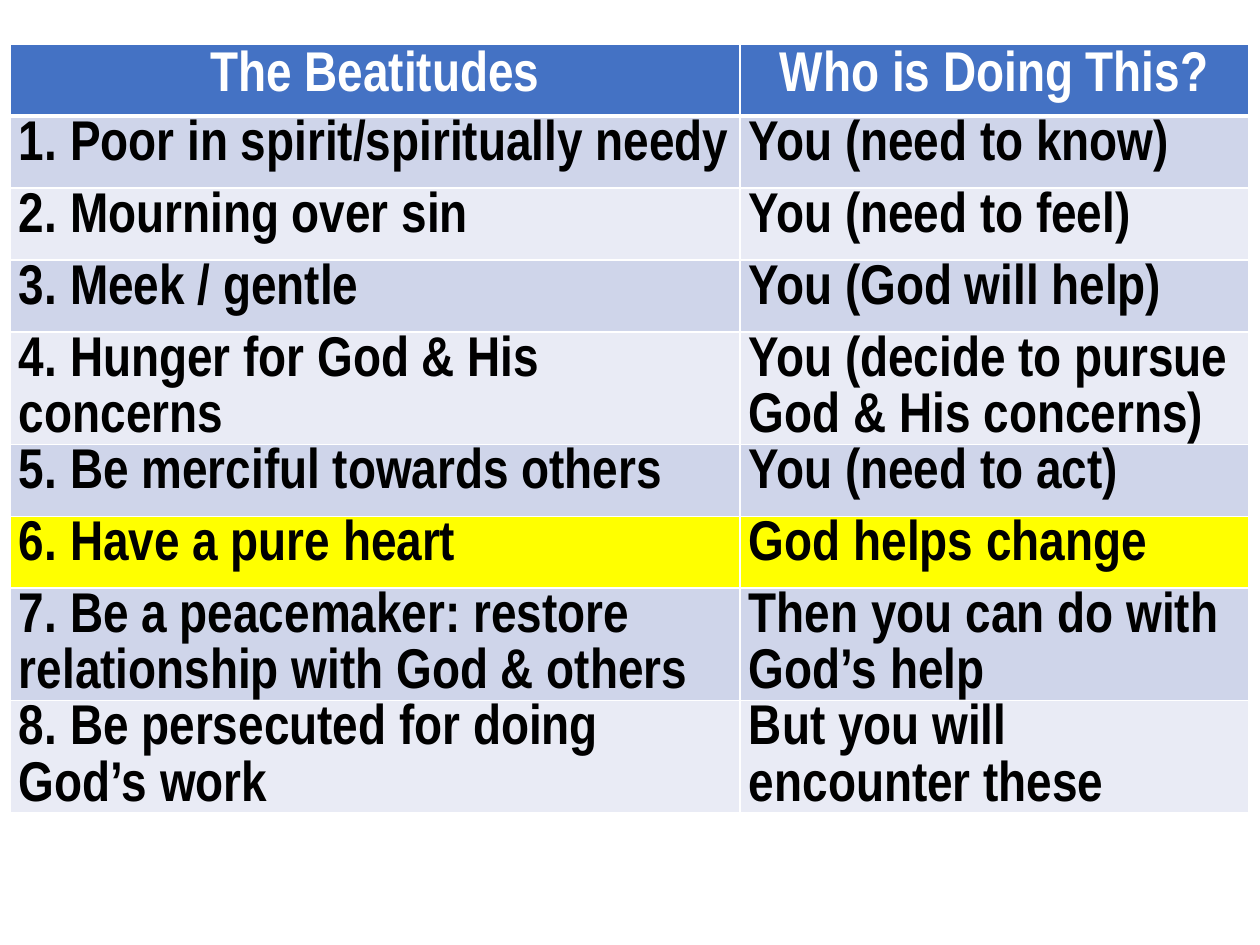
"""Build a slide with a table of the Beatitudes and who is doing each one."""
import pptx
import pptx.dml.color
import pptx.enum.text
import pptx.oxml
import pptx.oxml.ns
import pptx.util

PX = 914400 / 126


def px(n):
    return pptx.util.Emu(round(n * PX))


def color(value):
    return pptx.dml.color.RGBColor.from_string(value)


rows = [
    ("The Beatitudes", "Who is Doing This?"),
    ("1. Poor in spirit/spiritually needy", "You (need to know)"),
    ("2. Mourning over sin", "You (need to feel)"),
    ("3. Meek / gentle", "You (God will help)"),
    ("4. Hunger for God & His concerns", "You (decide to pursue God & His concerns)"),
    ("5. Be merciful towards others", "You (need to act)"),
    ("6. Have a pure heart", "God helps change"),
    ("7. Be a peacemaker: restore relationship with God & others", "Then you can do with God’s help"),
    ("8. Be persecuted for doing God’s work", "But you will encounter these"),
]
highlighted = 6

prs = pptx.Presentation()
prs.slide_width, prs.slide_height = px(1260), px(945)
slide = prs.slides.add_slide(prs.slide_layouts[6])
s = slide.shapes.add_table(len(rows), 2, px(10), px(44), px(1239), px(855))
table = s.table
for column, width in zip(table.columns, (730, 509)):
    column.width = px(width)

for i, texts in enumerate(rows):
    table.rows[i].height = px(72)
    header = i == 0
    if header:
        fill = "4472C4"
    elif i == highlighted:
        fill = "FFFF00"
    else:
        fill = "CFD5EA" if i % 2 else "E9EBF5"
    for j, text in enumerate(texts):
        cell = table.cell(i, j)
        tcPr = cell._tc.get_or_add_tcPr()
        for side in "LRTB":
            thick = (i, side) in ((0, "B"), (1, "T"))
            tcPr.append(pptx.oxml.parse_xml(
                f'<a:ln{side} {pptx.oxml.ns.nsdecls("a")} w="{38100 if thick else 12700}">'
                f'<a:solidFill><a:srgbClr val="FFFFFF"/></a:solidFill></a:ln{side}>'))
        cell.fill.solid()
        cell.fill.fore_color.rgb = color(fill)
        cell.text_frame.text = text
        p = cell.text_frame.paragraphs[0]
        if header:
            p.alignment = pptx.enum.text.PP_ALIGN.CENTER
        else:
            cell.margin_left = cell.margin_right = px(9)
            cell.margin_top = cell.margin_bottom = 0
            p.line_spacing = 1.07
        r = p.runs[0]
        r.font.name = "Arial Narrow"
        r.font.size = pptx.util.Pt(32)
        r.font.bold = True
        r.font.color.rgb = color("FFFFFF" if header else "000000")

s.height = px(855)
prs.save("out.pptx")
